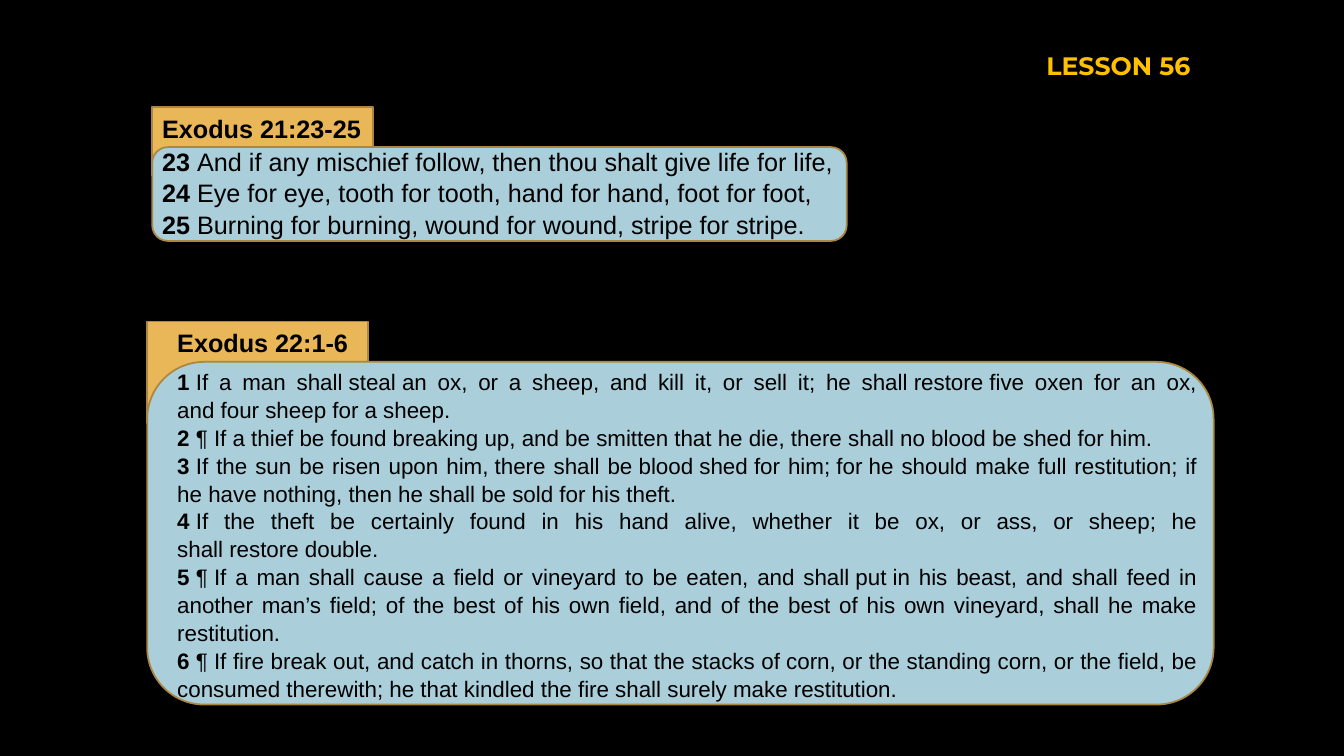
from pptx import Presentation
from pptx.dml.color import RGBColor
from pptx.enum.shapes import MSO_SHAPE as SHAPE
from pptx.enum.text import MSO_ANCHOR as ANCHOR, MSO_AUTO_SIZE as AUTO, PP_ALIGN as ALIGN
from pptx.util import Pt

LESSON = "LESSON 56"
NBSP = chr(160)
TAB_W, HEAD_H = 157.7, 28.8
LINE_SPACING = 1.04

PASSAGES = [
    {
        "head": "Exodus 22:1-6", "left": 105.1, "top": 229.7, "tab_h": 72.7,
        "panel": (761.8, 244.8), "indent": 14.4, "head_w": 137.5,
        "body_rise": 0, "body": (743, 244.8), "size": 16,
        "verses": [
            ("1", "If a man shall~steal~an ox, or a sheep, and kill it, or sell it; he shall~restore~five oxen for an ox, and~four~sheep for a sheep."),
            ("2", "¶~If a thief be found~breaking~up, and be smitten that he die,~there shall~no blood~be shed~for him."),
            ("3", "If the sun be risen upon him,~there shall be~blood~shed~for him;~for~he should make full restitution; if he have nothing, then he shall be sold for his theft."),
            ("4", "If the theft be certainly found in his hand alive, whether it be ox, or ass, or sheep; he shall~restore~double."),
            ("5", "¶~If a man shall cause a field or vineyard to be eaten, and shall~put~in his beast, and shall feed in another man’s field; of the best of his own field, and of the best of his own vineyard, shall he make restitution."),
            ("6", "¶~If fire break out, and catch in thorns, so that the stacks of~corn, or the standing corn, or the field, be consumed~therewith;~he that~kindled~the fire shall surely make restitution."),
        ],
    },
    {
        "head": "Exodus 21:23-25", "left": 108.7, "top": 76.3, "tab_h": 49,
        "panel": (496.1, 67), "indent": 0, "head_w": TAB_W,
        "body_rise": 5, "body": (506.2, 72.7), "size": 18,
        "verses": [
            ("23", "And if~any~mischief follow, then thou shalt give life for life,"),
            ("24", "Eye~for eye, tooth for tooth, hand for hand, foot for foot,"),
            ("25", "Burning for burning, wound for wound, stripe for stripe."),
        ],
    },
]


def color(value):
    return RGBColor.from_string(value)


def add_run(p, text, size, bold, font="Arial", ink="000000"):
    r = p.add_run()
    r.text = text.replace("~", NBSP)
    r.font.name = font
    r.font.size = Pt(size)
    r.font.bold = bold
    r.font.color.rgb = color(ink)


def add_block(s, kind, left, top, width, height, fill):
    sp = s.shapes.add_shape(kind, Pt(left), Pt(top), Pt(width), Pt(height))
    sp.shadow.inherit = False
    sp.fill.solid()
    sp.fill.fore_color.rgb = color(fill)
    sp.line.color.rgb = color("AC8741")
    sp.line.width = Pt(1.25)


def add_text(s, left, top, width, height, wrap):
    tf = s.shapes.add_textbox(Pt(left), Pt(top), Pt(width), Pt(height)).text_frame
    tf.word_wrap = wrap
    tf.auto_size = AUTO.SHAPE_TO_FIT_TEXT
    return tf


def add_passage_blocks(s, item):
    left, top = item["left"], item["top"]
    add_block(s, SHAPE.RECTANGLE, left, top, TAB_W, item["tab_h"], "E9B758")
    add_block(s, SHAPE.ROUNDED_RECTANGLE, left, top + HEAD_H, *item["panel"], "AACEDA")


def add_passage_text(s, item):
    left, top = item["left"] + item["indent"], item["top"]
    p = add_text(s, left, top, item["head_w"], HEAD_H, False).paragraphs[0]
    p.line_spacing = LINE_SPACING
    add_run(p, item["head"], 18, True)

    body_top = top + HEAD_H - item["body_rise"]
    tf = add_text(s, left, body_top, *item["body"], True)
    for i, (number, verse) in enumerate(item["verses"]):
        p = tf.add_paragraph() if i else tf.paragraphs[0]
        p.alignment = ALIGN.JUSTIFY
        p.line_spacing = LINE_SPACING
        add_run(p, number + NBSP, item["size"], True)
        add_run(p, verse, item["size"], False)


def add_lesson(s):
    title = s.shapes.title
    title.left, title.top, title.width, title.height = Pt(740.2), Pt(31.7), Pt(148.3), Pt(59)
    tf = title.text_frame
    tf.word_wrap = True
    tf.auto_size = AUTO.NONE
    tf.vertical_anchor = ANCHOR.TOP
    p = tf.paragraphs[0]
    p.alignment = ALIGN.LEFT
    p.space_before = Pt(0)
    p.line_spacing = LINE_SPACING
    add_run(p, LESSON, 18, True, "Montserrat", "FFC000")


def main():
    prs = Presentation()
    prs.slide_width, prs.slide_height = Pt(960), Pt(540)
    s = prs.slides.add_slide(prs.slide_layouts[5])
    s.background.fill.solid()
    s.background.fill.fore_color.rgb = color("000000")
    add_lesson(s)
    for item in PASSAGES:
        add_passage_blocks(s, item)
    for item in reversed(PASSAGES):
        add_passage_text(s, item)
    prs.save("out.pptx")


if __name__ == "__main__":
    main()
